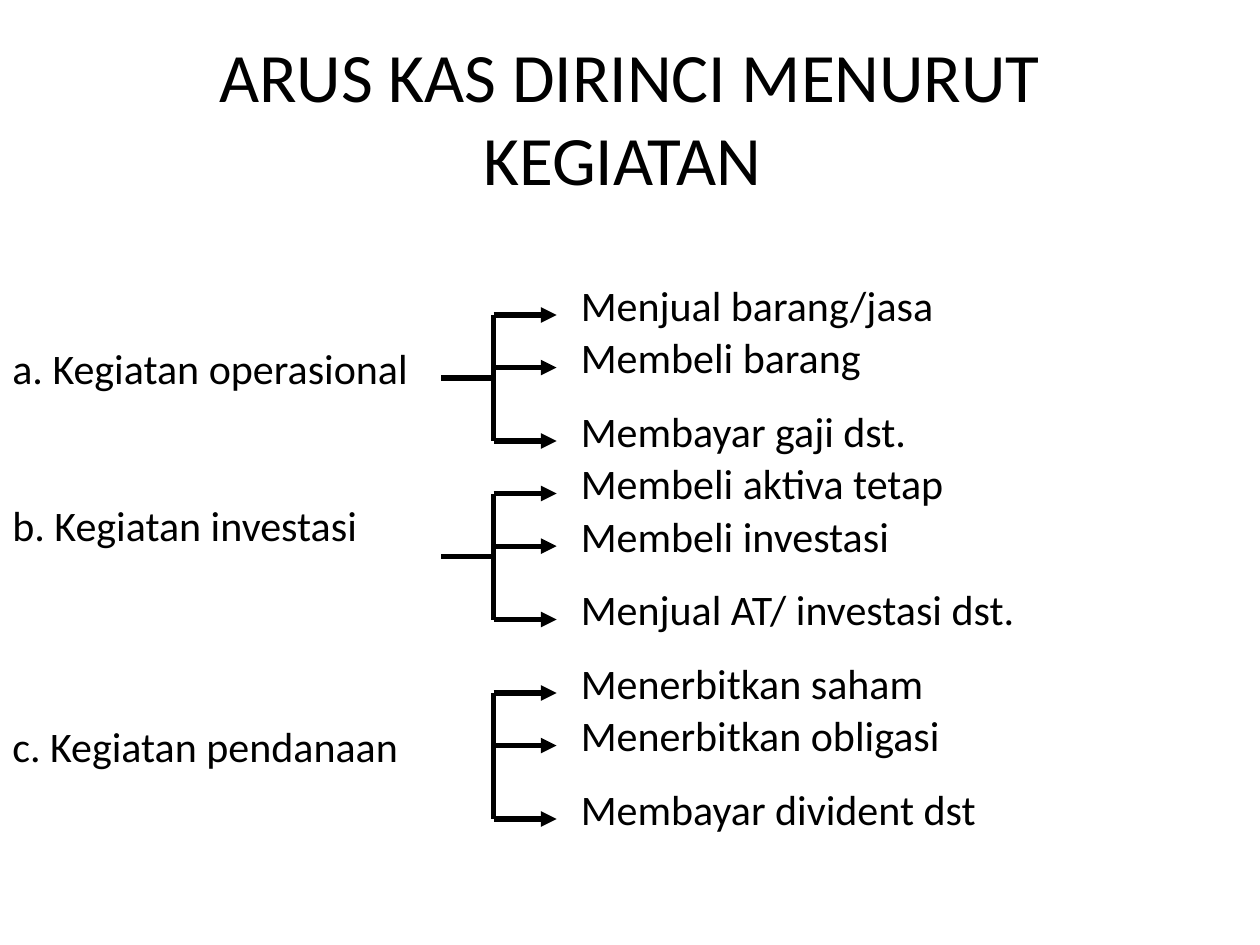
import pptx
import pptx.dml.color
import pptx.enum.shapes
import pptx.enum.text
import pptx.oxml
import pptx.oxml.ns
import pptx.util
from dataclasses import dataclass

Cm = pptx.util.Cm
Pt = pptx.util.Pt


@dataclass(frozen=True)
class Theme:
    font: str = "Calibri"
    ink: str = "000000"
    paper: str = "FFFFFF"
    title_size: float = 39.6
    body_size: float = 24
    line_width: float = 3


class SlideBuilder:
    def __init__(self, slide, theme):
        self.s = slide
        self.theme = theme
        self.ink = pptx.dml.color.RGBColor.from_string(theme.ink)
        fill = slide.background.fill
        fill.solid()
        fill.fore_color.rgb = pptx.dml.color.RGBColor.from_string(theme.paper)

    def style(self, p, size):
        p.font.name = self.theme.font
        p.font.size = Pt(size)
        p.font.color.rgb = self.ink

    def title(self, text, x, y, w, h):
        sp = self.s.shapes.title
        sp.left, sp.top, sp.width, sp.height = Cm(x), Cm(y), Cm(w), Cm(h)
        tf = sp.text_frame
        tf.text = text
        tf.vertical_anchor = pptx.enum.text.MSO_ANCHOR.MIDDLE
        p = tf.paragraphs[0]
        p.alignment = pptx.enum.text.PP_ALIGN.CENTER
        self.style(p, self.theme.title_size)

    def text(self, text, x, y, w):
        sp = self.s.shapes.add_textbox(Cm(x), Cm(y), Cm(w), Cm(1.27))
        tf = sp.text_frame
        tf.word_wrap = False
        tf.auto_size = pptx.enum.text.MSO_AUTO_SIZE.SHAPE_TO_FIT_TEXT
        tf.text = text
        self.style(tf.paragraphs[0], self.theme.body_size)

    def line(self, x1, y1, x2, y2, arrow=False):
        sp = self.s.shapes.add_connector(
            pptx.enum.shapes.MSO_CONNECTOR.STRAIGHT, Cm(x1), Cm(y1), Cm(x2), Cm(y2))
        sp.line.color.rgb = self.ink
        sp.line.width = Pt(self.theme.line_width)
        if arrow:
            ns = pptx.oxml.ns.nsdecls("a")
            sp.line._get_or_add_ln().append(
                pptx.oxml.parse_xml(f'<a:tailEnd {ns} type="triangle"/>'))
        sp_pr = sp._element.spPr
        sp_pr.append(sp_pr.makeelement(pptx.oxml.ns.qn("a:effectLst"), {}))

    def branch(self, top, offsets, items, stem):
        """Bracket whose arrows point at the (text, width) items."""
        if stem:
            middle = top + offsets[-1] / 2
            self.line(STEM_X, middle, BRACKET_X, middle)
        self.line(BRACKET_X, top, BRACKET_X, top + offsets[-1])
        for offset, (text, width) in zip(offsets, items):
            y = top + offset
            self.line(BRACKET_X, y, ARROW_X, y, arrow=True)
            self.text(text, ITEM_X, y - ITEM_RISE, width)


# Horizontal positions and row spacing, in centimetres
STEM_X, BRACKET_X, ARROW_X, ITEM_X = 8.89, 9.95, 11.22, 11.46
ITEM_RISE = 0.85
ROW_OFFSETS = (0, 1.06, 2.54)

# Label, label width, label top, bracket top, stem, items with widths
ACTIVITIES = [
    ("a. Kegiatan operasional", 8.56, 6.77, 6.35, True,
     [("Menjual barang/jasa", 7.7), ("Membeli barang", 6.22),
      ("Membayar gaji dst.", 7.14)]),
    ("b. Kegiatan investasi", 7.52, 9.95, 9.95, True,
     [("Membeli aktiva tetap", 7.9), ("Membeli investasi", 6.78),
      ("Menjual AT/ investasi dst.", 9.32)]),
    ("c. Kegiatan pendanaan", 8.56, 14.39, 13.97, False,
     [("Menerbitkan saham", 7.49), ("Menerbitkan obligasi", 7.82),
      ("Membayar divident dst", 8.56)]),
]


def main():
    prs = pptx.Presentation()
    prs.slide_width, prs.slide_height = Cm(25.4), Cm(19.05)
    s = prs.slides.add_slide(prs.slide_layouts[5])
    builder = SlideBuilder(s, Theme())

    # Title
    builder.title("ARUS KAS DIRINCI MENURUT KEGIATAN ", 1.27, 0.76, 22.86, 3.18)

    # Activities with their cash flows
    for label, width, label_top, top, stem, items in ACTIVITIES:
        builder.text(label, 0, label_top, width)
        builder.branch(top, ROW_OFFSETS, items, stem)

    prs.save("out.pptx")


if __name__ == "__main__":
    main()
